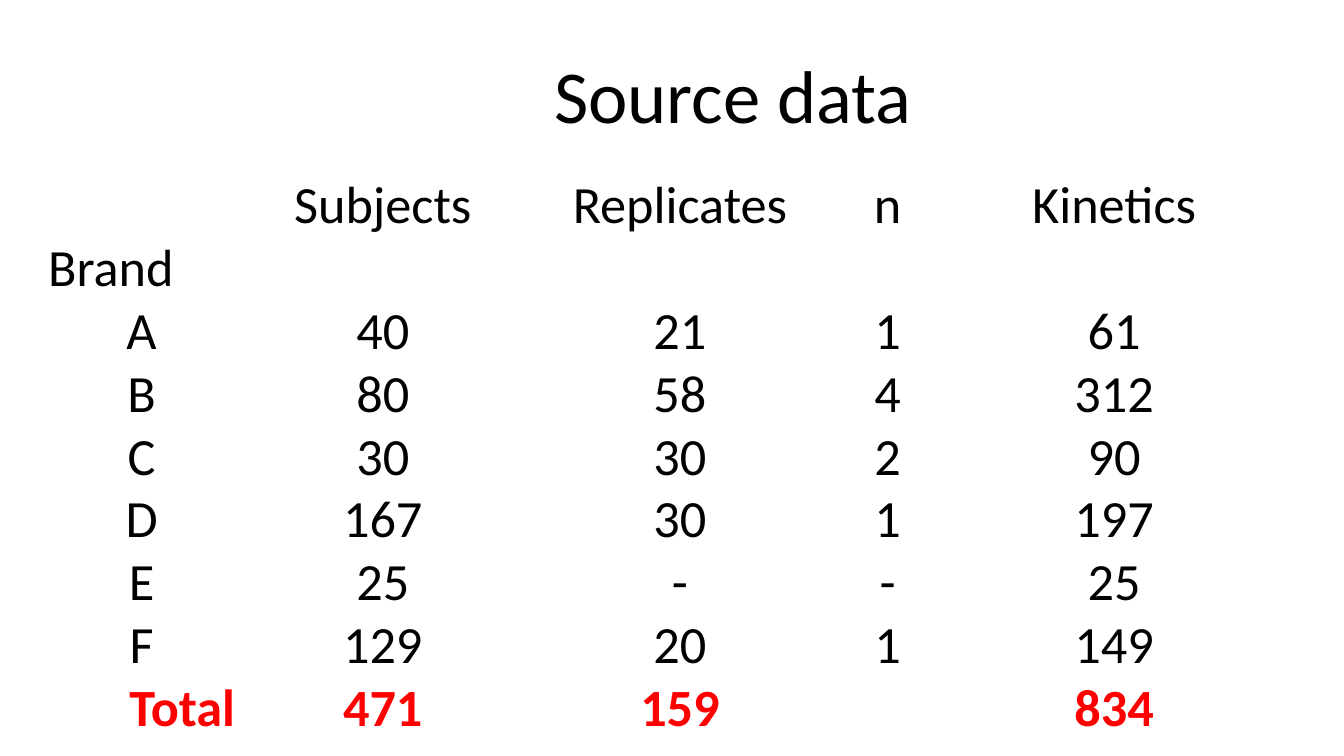
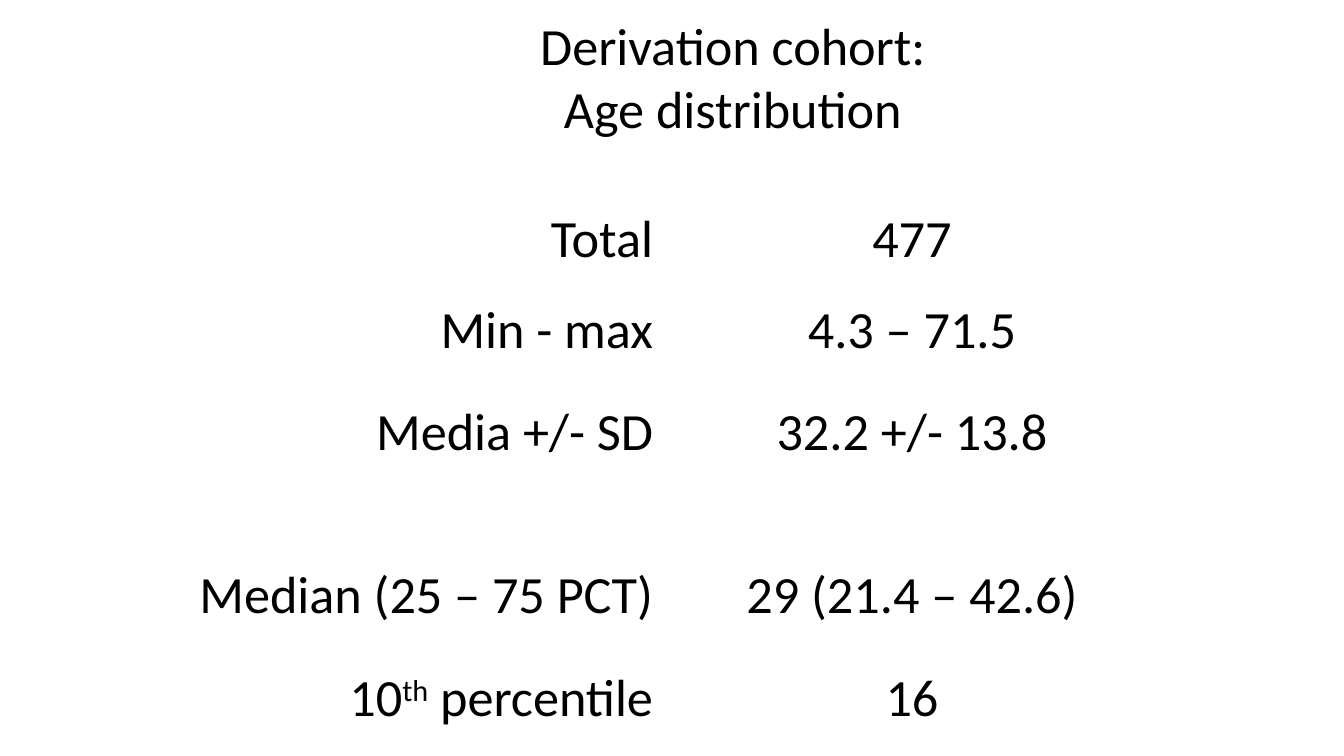
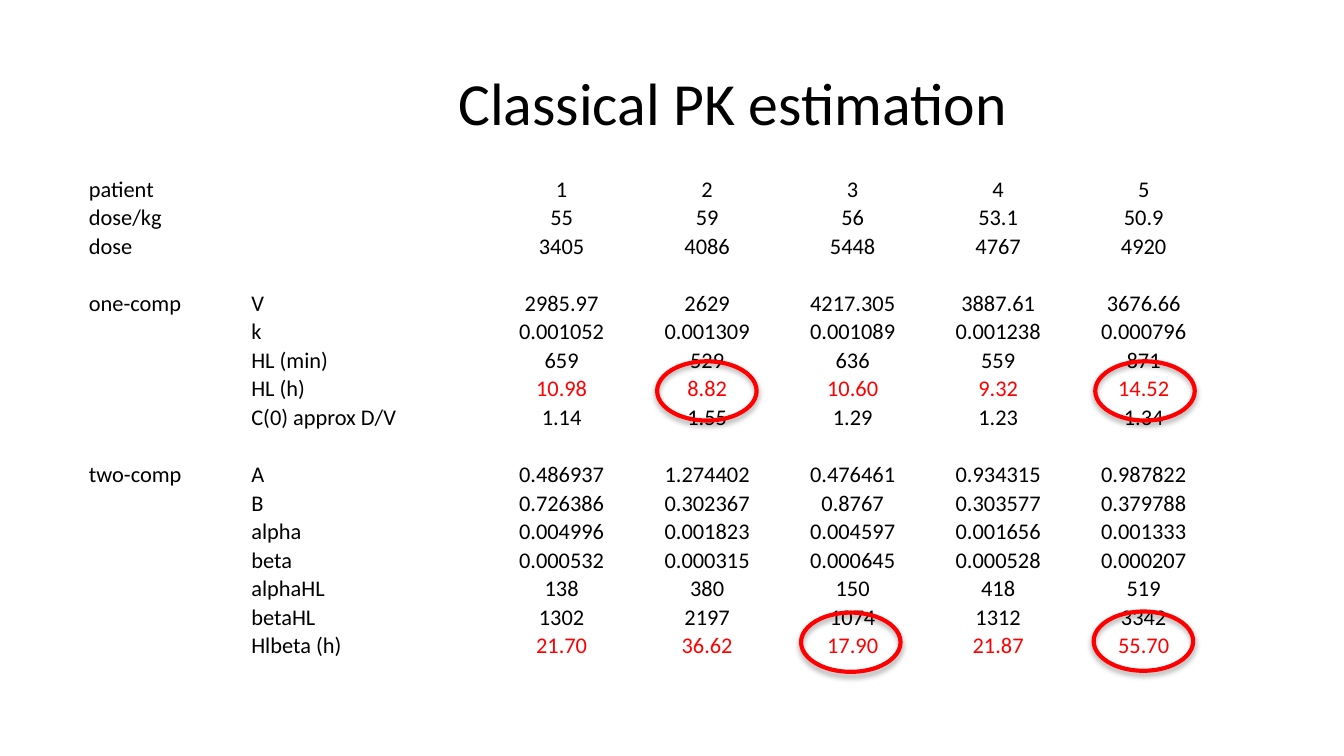
import pptx
import pptx.dml.color
import pptx.enum.shapes
import pptx.enum.text
import pptx.oxml
import pptx.oxml.ns
import pptx.util
from lxml import etree

Cm = pptx.util.Cm
qn = pptx.oxml.ns.qn
ALIGN = pptx.enum.text.PP_ALIGN
ANCHOR = pptx.enum.text.MSO_ANCHOR

COLOURS = {"paper": "FFFFFF", "ink": "000000", "accent": "FF0000"}
FONT = "Calibri"
PLAIN_TABLE = "{2D5ABB26-0587-4C30-8999-92F81FD0307C}"
TITLE_LEFT, TITLE_WIDTH = 6.88, 13.94

SOURCE_ROWS = [
    ["", "Subjects", "Replicates", "n", "Kinetics"],
    ["Brand", "", "", "", ""],
    ["A", "40", "21", "1", "61"],
    ["B", "80", "58", "4", "312"],
    ["C", "30", "30", "2", "90"],
    ["D", "167", "30", "1", "197"],
    ["E", "25", "-", "-", "25"],
    ["F", "129", "20", "1", "149"],
    ["Total", "471", "159", "", "834"],
]
AGE_ROWS = [
    ["Total", "477"],
    ["", ""],
    ["Min - max", "4.3 – 71.5"],
    ["", ""],
    ["Media +/- SD", "32.2 +/- 13.8"],
    ["", ""],
    ["Median (25 – 75 PCT)", "29 (21.4 – 42.6)"],
    ["", ""],
    ["10^th^ percentile", "16"],
]
AGE_HEIGHTS = [1.22, 0.51, 1.22, 0.71, 1.22, 0.71, 2.39, 0.71, 1.22]
KINETIC_ROWS = [
    ["patient", "", "", "1", "2", "3", "4", "5"],
    ["dose/kg", "", "", "55", "59", "56", "53.1", "50.9"],
    ["dose", "", "", "3405", "4086", "5448", "4767", "4920"],
    [""] * 8,
    ["one-comp", "", "V", "2985.97", "2629", "4217.305", "3887.61", "3676.66"],
    ["", "", "k", "0.001052", "0.001309", "0.001089", "0.001238", "0.000796"],
    ["", "", "HL (min)", "659", "529", "636", "559", "871"],
    ["", "", "HL (h)", "10.98", "8.82", "10.60", "9.32", "14.52"],
    ["", "", "C(0) approx D/V", "1.14", "1.55", "1.29", "1.23", "1.34"],
    [""] * 8,
    ["two-comp", "", "A", "0.486937", "1.274402", "0.476461", "0.934315", "0.987822"],
    ["", "", "B", "0.726386", "0.302367", "0.8767", "0.303577", "0.379788"],
    ["", "", "alpha", "0.004996", "0.001823", "0.004597", "0.001656", "0.001333"],
    ["", "", "beta", "0.000532", "0.000315", "0.000645", "0.000528", "0.000207"],
    ["", "", "alphaHL", "138", "380", "150", "418", "519"],
    ["", "", "betaHL", "1302", "2197", "1074", "1312", "3342"],
    ["", "", "Hlbeta (h)", "21.70", "36.62", "17.90", "21.87", "55.70"],
]
HALF_LIFE_LABELS = ("HL (h)", "Hlbeta (h)")
RING_OFFSETS = [(10.77, 3.53), (19.05, 3.53), (13.49, 8.28), (19.02, 8.26)]
RING_WIDTH, RING_HEIGHT = 1.88, 1.12


def rgb(name):
    """Return the named colour."""
    return pptx.dml.color.RGBColor.from_string(COLOURS[name])


def add_span(para, text, size, colour="ink", bold=False, raised=False):
    """Append one formatted run to a paragraph."""
    span = para.add_run()
    span.text = text
    span.font.name = FONT
    span.font.size = pptx.util.Pt(size)
    span.font.bold = bold
    span.font.color.rgb = rgb(colour)
    if raised:
        span.font._rPr.set("baseline", "30000")


def add_page(deck):
    """Add a blank page with the shared background."""
    page = deck.slides.add_slide(deck.slide_layouts[6])
    page.background.fill.solid()
    page.background.fill.fore_color.rgb = rgb("paper")
    return page


def add_title(page, lines, top, height, size):
    """Place a centred title in the shared title column."""
    box = page.shapes.add_textbox(Cm(TITLE_LEFT), Cm(top), Cm(TITLE_WIDTH), Cm(height))
    frame = box.text_frame
    frame.word_wrap = True
    frame.vertical_anchor = ANCHOR.MIDDLE
    para = frame.paragraphs[0]
    para.alignment = ALIGN.CENTER
    for index, line in enumerate(lines):
        if index:
            para.add_line_break()
        add_span(para, line, size)


def fill_cell(cell, text, size, inset, style):
    """Write one table cell, raising the text between carets."""
    align, colour, bold = style
    cell.fill.background()
    cell.vertical_anchor = ANCHOR.BOTTOM
    cell.margin_left = cell.margin_right = cell.margin_top = Cm(inset)
    cell.margin_bottom = 0
    para = cell.text_frame.paragraphs[0]
    para.alignment = align
    if not text:
        etree.SubElement(para._p, qn("a:endParaRPr"), sz=str(size * 100))
        return
    for index, piece in enumerate(text.split("^")):
        add_span(para, piece, size, colour, bold, raised=index % 2 == 1)


def add_data_table(page, origin, rows, widths, heights, size, inset, style, empty_size):
    """Place an unruled table, styled cell by cell by a rule."""
    left, top = origin
    frame = page.shapes.add_table(len(rows), len(widths), Cm(left), Cm(top),
                                  Cm(sum(widths)), Cm(sum(heights)))
    table = frame.table
    table.first_row = table.horz_banding = False
    table._tbl.tblPr.find(qn("a:tableStyleId")).text = PLAIN_TABLE
    for column, width in zip(table.columns, widths):
        column.width = Cm(width)
    for row, height in zip(table.rows, heights):
        row.height = Cm(height)
    for row_index, row in enumerate(rows):
        for column_index, text in enumerate(row):
            fill_cell(table.cell(row_index, column_index), text,
                      size if text else empty_size, inset, style(row, column_index))


def add_ring(page, left, top):
    """Draw a red ring with a soft shadow around a value."""
    ring = page.shapes.add_shape(pptx.enum.shapes.MSO_SHAPE.OVAL, Cm(left), Cm(top),
                                 Cm(RING_WIDTH), Cm(RING_HEIGHT))
    ring.fill.background()
    ring.line.color.rgb = rgb("accent")
    ring.line.width = pptx.util.Pt(2.25)
    ring.shadow.inherit = False
    effects = ring._element.spPr.find(qn("a:effectLst"))
    shadow = etree.SubElement(effects, qn("a:outerShdw"), blurRad=str(pptx.util.Pt(3.1)),
                              dist=str(pptx.util.Pt(1.8)), dir="5400000", rotWithShape="0")
    tint = etree.SubElement(shadow, qn("a:srgbClr"), val=COLOURS["ink"])
    etree.SubElement(tint, qn("a:alpha"), val="35000")


def source_style(row, column):
    """Style the source data cells, with the totals in bold red."""
    if row[0] == "Total":
        return (ALIGN.CENTER if column else ALIGN.RIGHT), "accent", True
    heading = row[0] == "Brand" and column == 0
    return (ALIGN.LEFT if heading else ALIGN.CENTER), "ink", False


def age_style(row, column):
    """Style the age cells, with labels to the right."""
    return (ALIGN.CENTER if column else ALIGN.RIGHT), "ink", False


def kinetic_style(row, column):
    """Style the kinetic cells, with half-lives in hours in red."""
    if column < 3:
        return ALIGN.LEFT, "ink", False
    return ALIGN.CENTER, "accent" if row[2] in HALF_LIFE_LABELS else "ink", False


def build_source_page(deck):
    """Build the source data page."""
    page = add_page(deck)
    add_title(page, ["Source data"], 0.61, 2.31, 40)
    add_data_table(page, (0.91, 3.28), SOURCE_ROWS, [3.53, 5.59, 5.64, 2.21, 6.35],
                   [1.19] * len(SOURCE_ROWS), 28, 0, source_style, 28)


def build_age_page(deck):
    """Build the age distribution page."""
    page = add_page(deck)
    add_data_table(page, (3.63, 3.89), AGE_ROWS, [8.74, 9.73], AGE_HEIGHTS,
                   28, 0.03, age_style, 10)
    add_title(page, ["Derivation cohort:", "Age distribution"], 0.1, 2.69, 28)


def build_kinetic_page(deck):
    """Build the classical estimation page with ringed half-lives."""
    page = add_page(deck)
    left, top = 1.65, 3.3
    add_data_table(page, (left, top), KINETIC_ROWS, [2.41, 0.66, 4.52] + [2.75] * 5,
                   [0.53] * len(KINETIC_ROWS), 12, 0.03, kinetic_style, 12)
    add_title(page, ["Classical PK estimation"], 0.58, 2.69, 32)
    for across, down in RING_OFFSETS:
        add_ring(page, left + across, top + down)


def main():
    """Build and save the deck."""
    deck = pptx.Presentation()
    deck.slide_width, deck.slide_height = Cm(25.4), Cm(14.29)
    build_source_page(deck)
    build_age_page(deck)
    build_kinetic_page(deck)
    deck.save("out.pptx")


if __name__ == "__main__":
    main()
